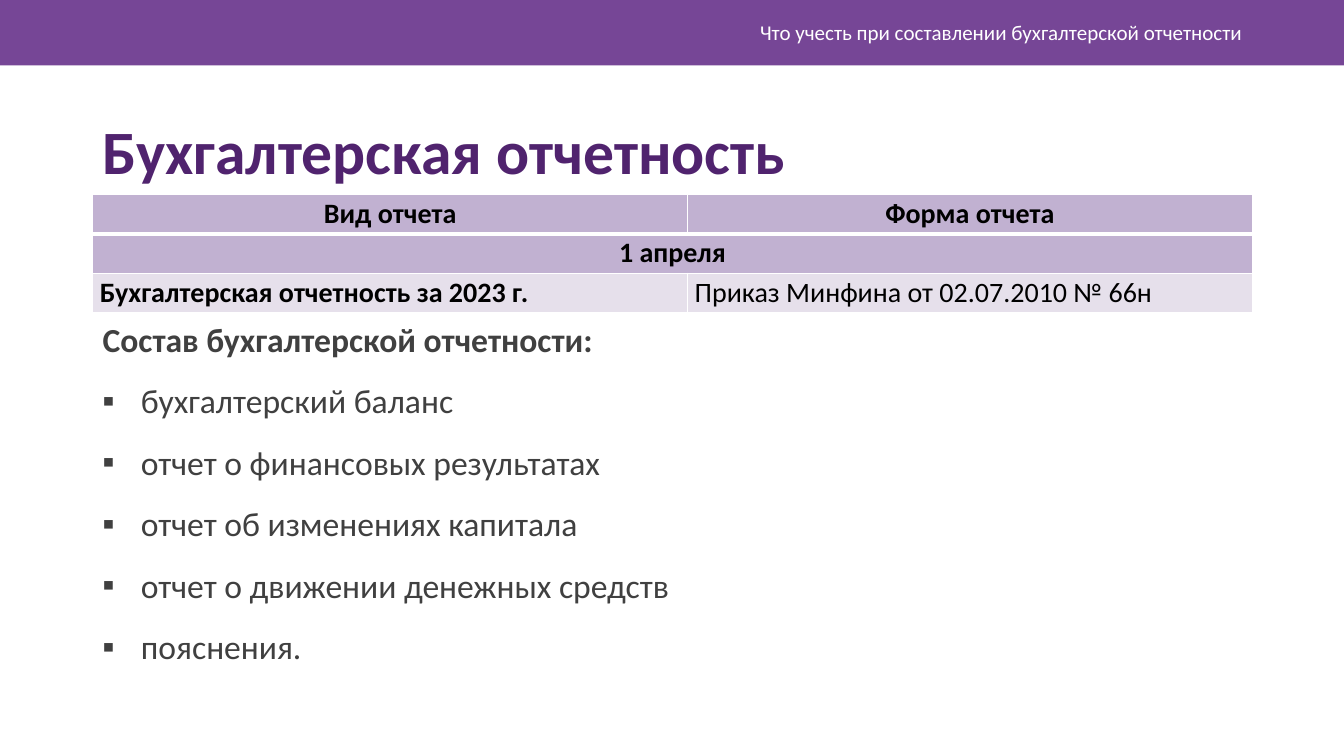
from lxml.etree import SubElement
from pptx import Presentation
from pptx.dml.color import RGBColor
from pptx.enum.shapes import MSO_SHAPE as Shape
from pptx.enum.text import MSO_ANCHOR as Anchor, PP_ALIGN as Align
from pptx.oxml.ns import qn
from pptx.util import Pt

PX = 9144
WHITE = RGBColor(0xFF, 0xFF, 0xFF)
BLACK = RGBColor(0x00, 0x00, 0x00)
PURPLE = RGBColor(0x76, 0x46, 0x96)
DEEP_PURPLE = RGBColor(0x50, 0x23, 0x6E)
GREY = RGBColor(0x40, 0x40, 0x40)
LILAC = RGBColor(0xC1, 0xB1, 0xD1)
PALE_LILAC = RGBColor(0xE6, 0xE0, 0xEB)

HEADINGS = ["Вид отчета", "Форма отчета"]
DEADLINE = ["1 апреля", ""]
REPORT = ["Бухгалтерская отчетность за 2023 г.", "Приказ Минфина от 02.07.2010 № 66н"]
CONTENTS = [
    "бухгалтерский баланс",
    "отчет о финансовых результатах",
    "отчет об изменениях капитала",
    "отчет о движении денежных средств",
    "пояснения.",
]


class SlideBuilder:
    """Draws styled elements on one slide, with lengths in px."""

    font_name = "Calibri"

    def __init__(self, deck):
        self.slide = deck.slides.add_slide(deck.slide_layouts[5])

    def apply_format(self, target, values):
        for name, value in values.items():
            setattr(target, name, value)

    def add_text(self, para, text, size, color, bold=False, **layout):
        span = para.add_run()
        span.text = text
        self.apply_format(para, layout)
        self.apply_format(span.font, {"name": self.font_name, "size": Pt(size), "bold": bold})
        span.font.color.rgb = color

    def band(self, left, top, width, height, color):
        band = self.slide.shapes.add_shape(
            Shape.RECTANGLE, left * PX, top * PX, width * PX, height * PX)
        band.shadow.inherit = False
        band.fill.solid()
        band.fill.fore_color.rgb = color
        band.line.fill.background()

    def title(self, left, top, width, height, text):
        title = self.slide.shapes.title
        self.apply_format(title, {"left": left * PX, "top": top * PX,
                                  "width": width * PX, "height": height * PX})
        self.apply_format(title.text_frame, {"word_wrap": True, "vertical_anchor": Anchor.TOP})
        self.add_text(title.text_frame.paragraphs[0], text, 44, DEEP_PURPLE, True,
                      alignment=Align.LEFT, line_spacing=0.9, space_before=Pt(0))

    def text_box(self, left, top, width, height, anchor=Anchor.TOP):
        box = self.slide.shapes.add_textbox(left * PX, top * PX, width * PX, height * PX)
        self.apply_format(box.text_frame, {"word_wrap": True, "vertical_anchor": anchor})
        return box.text_frame

    def bullet_list(self, frame, heading, items):
        spacing = {"line_spacing": 0.9, "space_after": Pt(8)}
        self.add_text(frame.paragraphs[0], heading, 24, GREY, True, **spacing)
        for item in items:
            para = frame.add_paragraph()
            properties = para._p.get_or_add_pPr()
            properties.set("marL", str(38 * PX))
            properties.set("indent", str(-38 * PX))
            SubElement(properties, qn("a:buFont"), typeface=self.font_name)
            SubElement(properties, qn("a:buChar"), char="▪")
            self.add_text(para, item, 24, GREY, space_before=Pt(10), **spacing)

    def table(self, left, top, widths, row_height, rows):
        frame = self.slide.shapes.add_table(
            len(rows), len(widths), left * PX, top * PX,
            sum(widths) * PX, row_height * len(rows) * PX)
        table = frame.table
        for column, width in zip(table.columns, widths):
            column.width = width * PX
        for row in table.rows:
            row.height = row_height * PX
        for row_index, (texts, fill, align, bolds) in enumerate(rows):
            for column_index, (text, bold) in enumerate(zip(texts, bolds)):
                cell = table.cell(row_index, column_index)
                self.apply_format(cell, {"margin_left": 7 * PX, "margin_right": 7 * PX,
                                         "margin_top": 0, "margin_bottom": 0})
                self.borders(cell, {"L": 1, "R": 1, "T": 3 if row_index == 1 else 1,
                                    "B": 3 if row_index == 0 else 1})
                cell.fill.solid()
                cell.fill.fore_color.rgb = fill
                if text:
                    self.add_text(cell.text_frame.paragraphs[0], text, 20, BLACK, bold,
                                  alignment=align, line_spacing=1.07)
        return table

    def borders(self, cell, points):
        properties = cell._tc.get_or_add_tcPr()
        for side, width in points.items():
            line = SubElement(properties, qn(f"a:ln{side}"), w=str(int(Pt(width))))
            fill = SubElement(line, qn("a:solidFill"))
            SubElement(fill, qn("a:srgbClr"), val=str(WHITE))


def main():
    deck = Presentation()
    deck.slide_width, deck.slide_height = 1333 * PX, 750 * PX
    page = SlideBuilder(deck)
    page.band(0, 0, 1333, 65, PURPLE)
    topic = page.text_box(354, 12, 888, 40, Anchor.MIDDLE)
    page.add_text(topic.paragraphs[0], "Что учесть при составлении бухгалтерской отчетности",
                  15, WHITE, alignment=Align.RIGHT)
    page.title(92, 115, 1150, 77, "Бухгалтерская отчетность")
    reports = page.table(92, 193, [590, 560], 39, [
        (HEADINGS, LILAC, Align.CENTER, (True, True)),
        (DEADLINE, LILAC, Align.CENTER, (True, True)),
        (REPORT, PALE_LILAC, Align.LEFT, (True, False)),
    ])
    reports.cell(1, 0).merge(reports.cell(1, 1))
    contents = page.text_box(92, 316, 1150, 382)
    page.bullet_list(contents, "Состав бухгалтерской отчетности:", CONTENTS)
    deck.save("out.pptx")


if __name__ == "__main__":
    main()
